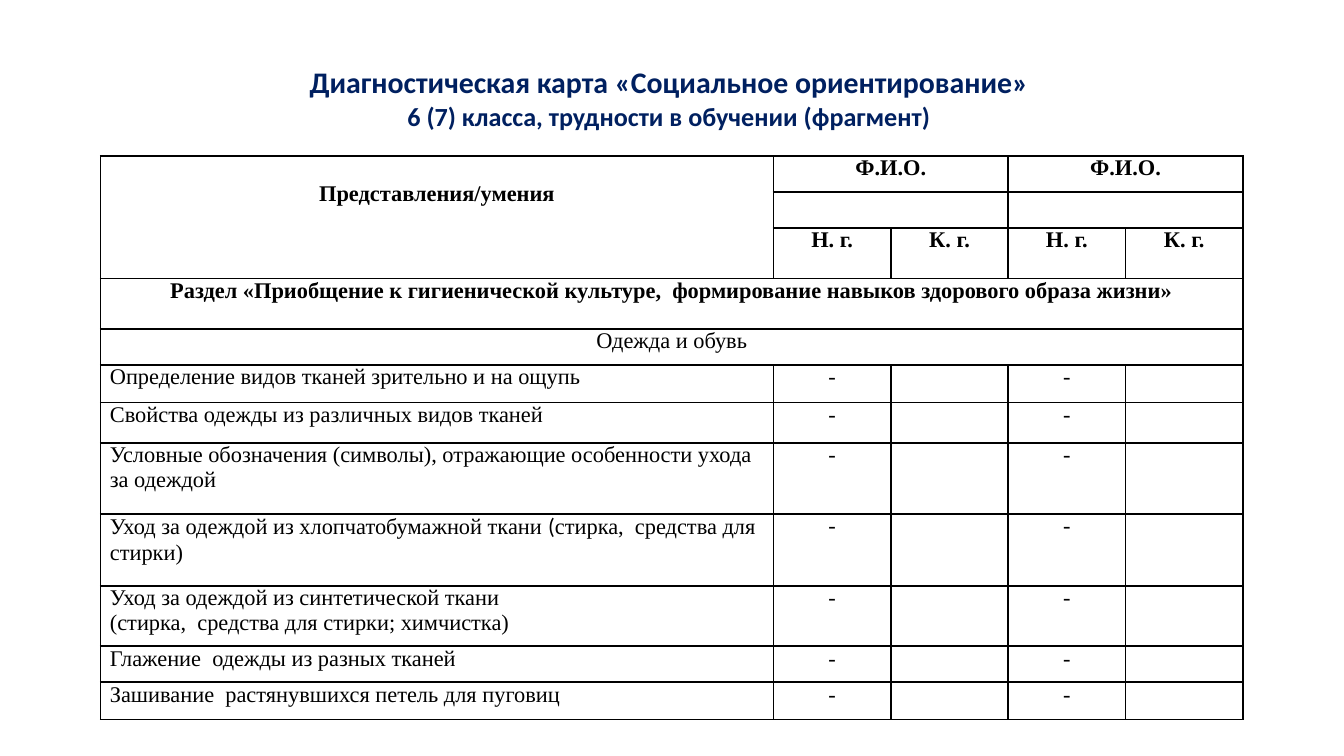
from dataclasses import dataclass

from lxml import etree
from pptx import Presentation
from pptx.dml.color import RGBColor
from pptx.enum.text import MSO_ANCHOR, PP_ALIGN
from pptx.oxml.ns import qn
from pptx.util import Pt

CENTER, LEFT = PP_ALIGN.CENTER, PP_ALIGN.LEFT
MIDDLE, TOP = MSO_ANCHOR.MIDDLE, MSO_ANCHOR.TOP
SANS, SERIF = "Calibri", "Times New Roman"
NAVY, BLACK = "002060", "000000"
TABLE_SIZE = 12


@dataclass
class TextRun:
    text: str
    size: float = TABLE_SIZE
    font: str = SERIF
    color: str = BLACK
    bold: bool = False


@dataclass
class Skill:
    lines: list[list[TextRun]]
    height: float


@dataclass
class HeaderCell:
    row: int
    column: int
    text: str
    row_span: int = 1
    column_span: int = 1
    bold: bool = True
    top_margin: float = 0


TITLE_LINES = [
    TextRun("Диагностическая карта «Социальное ориентирование»", 16, SANS, NAVY, True),
    TextRun("6 (7) класса, трудности в обучении (фрагмент)", 14, SANS, NAVY, True),
]
COLUMN_WIDTHS = [360.5] + [62.9] * 4
HEADER_HEIGHTS = [19.3, 19.3, 26.5, 27, 19.3]

HEADER_CELLS = [
    HeaderCell(0, 0, "Представления/умения", row_span=3, top_margin=13.8),
    HeaderCell(3, 0, "Раздел «Приобщение к гигиенической культуре,  "
               "формирование навыков здорового образа жизни»", column_span=5),
    HeaderCell(4, 0, "Одежда и обувь", column_span=5, bold=False),
]
for pupil_column in (1, 3):
    HEADER_CELLS += [
        HeaderCell(0, pupil_column, "Ф.И.О.", column_span=2),
        HeaderCell(1, pupil_column, "", column_span=2),
        HeaderCell(2, pupil_column, "Н. г."),
        HeaderCell(2, pupil_column + 1, "К. г."),
    ]

SKILLS = [
    Skill([[TextRun("Определение видов тканей зрительно и на ощупь")]], 20.1),
    Skill([[TextRun("Свойства одежды из различных видов тканей")]], 21.7),
    Skill([[TextRun("Условные обозначения (символы), отражающие особенности "
                    "ухода за одеждой")]], 38),
    Skill([[TextRun("Уход за одеждой из хлопчатобумажной ткани "),
            TextRun("(", font=SANS),
            TextRun("стирка,  средства для стирки)")]], 38.6),
    Skill([[TextRun("Уход за одеждой из синтетической ткани")],
           [TextRun("(стирка,  средства для стирки; химчистка)")]], 32.4),
    Skill([[TextRun("Глажение  одежды из разных тканей")]], 19.3),
    Skill([[TextRun("Зашивание  растянувшихся петель для пуговиц")]], 20.1),
]


def rgb(value: str) -> RGBColor:
    return RGBColor.from_string(value)


def add_run(paragraph, text_run: TextRun) -> None:
    run = paragraph.add_run()
    run.text = text_run.text
    run.font.size = Pt(text_run.size)
    run.font.name = text_run.font
    run.font.bold = text_run.bold
    run.font.color.rgb = rgb(text_run.color)


def write_cell(cell, lines: list[list[TextRun]], alignment=CENTER) -> None:
    for index, line in enumerate(lines):
        frame = cell.text_frame
        paragraph = frame.add_paragraph() if index else frame.paragraphs[0]
        paragraph.alignment = alignment
        for text_run in line:
            add_run(paragraph, text_run)


def add_borders(cell, color: str, width: float) -> None:
    properties = cell._tc.get_or_add_tcPr()
    for position, side in enumerate(("lnL", "lnR", "lnT", "lnB")):
        line = etree.Element(qn(f"a:{side}"), w=str(Pt(width)))
        fill = etree.SubElement(line, qn("a:solidFill"))
        etree.SubElement(fill, qn("a:srgbClr"), val=color)
        properties.insert(position, line)


def format_cell(cell) -> None:
    cell.margin_left = cell.margin_right = Pt(5)
    cell.margin_top = cell.margin_bottom = 0
    cell.vertical_anchor = TOP
    cell.fill.background()
    add_borders(cell, BLACK, 1)


def size_empty_cell(cell) -> None:
    """Keep an empty cell from stretching its row."""
    paragraph = cell.text_frame.paragraphs[0]
    if not paragraph.runs:
        etree.SubElement(paragraph._p, qn("a:endParaRPr"), sz=str(TABLE_SIZE * 100))


def add_title(slide) -> None:
    title = slide.shapes.title
    title.left, title.top, title.width, title.height = Pt(48.2), Pt(15), Pt(620.6), Pt(90.7)
    frame = title.text_frame
    frame.word_wrap = True
    frame.vertical_anchor = MIDDLE
    frame.margin_left = frame.margin_right = Pt(5)
    frame.margin_top, frame.margin_bottom = Pt(3), Pt(19)
    paragraph = frame.paragraphs[0]
    paragraph.alignment = CENTER
    for index, line in enumerate(TITLE_LINES):
        if index:
            paragraph.add_line_break()
        add_run(paragraph, line)


def add_diagnostic_table(slide) -> None:
    heights = HEADER_HEIGHTS + [skill.height for skill in SKILLS]
    frame = slide.shapes.add_table(len(heights), len(COLUMN_WIDTHS), Pt(53.9), Pt(83.5),
                                   Pt(sum(COLUMN_WIDTHS)), Pt(sum(heights)))
    table = frame.table
    table.first_row = table.horz_banding = False
    for column, width in zip(table.columns, COLUMN_WIDTHS):
        column.width = Pt(width)
    for row, height in zip(table.rows, heights):
        row.height = Pt(height)
    for cell in table.iter_cells():
        format_cell(cell)

    # Header and section rows
    for header in HEADER_CELLS:
        cell = table.cell(header.row, header.column)
        if header.row_span > 1 or header.column_span > 1:
            cell.merge(table.cell(header.row + header.row_span - 1,
                                  header.column + header.column_span - 1))
        cell.margin_top = Pt(header.top_margin)
        if header.text:
            write_cell(cell, [[TextRun(header.text, bold=header.bold)]])

    # Skills, with a mark for each pupil at the start of the year
    for row, skill in enumerate(SKILLS, start=len(HEADER_HEIGHTS)):
        write_cell(table.cell(row, 0), skill.lines, LEFT)
        for column in (1, 3):
            write_cell(table.cell(row, column), [[TextRun("-")]])

    for cell in table.iter_cells():
        size_empty_cell(cell)


def main() -> None:
    presentation = Presentation()
    presentation.slide_width, presentation.slide_height = Pt(720), Pt(405)
    slide = presentation.slides.add_slide(presentation.slide_layouts[5])
    add_title(slide)
    add_diagnostic_table(slide)
    presentation.save("out.pptx")


if __name__ == "__main__":
    main()
